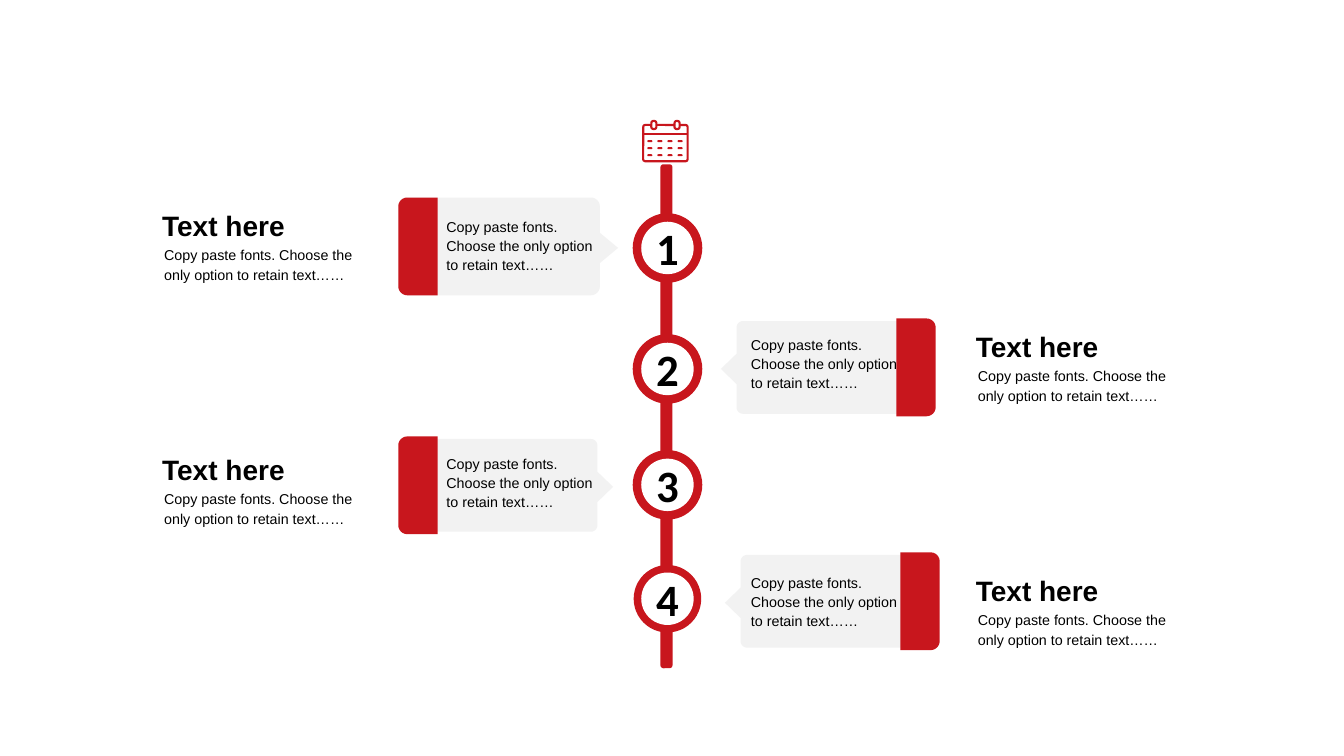
from math import cos, radians, sin

from lxml import etree
from pptx import Presentation
from pptx.dml.color import RGBColor
from pptx.enum.shapes import MSO_CONNECTOR, MSO_SHAPE
from pptx.enum.text import MSO_ANCHOR, PP_ALIGN
from pptx.oxml.ns import qn
from pptx.util import Inches, Pt

RED = RGBColor(0xC8, 0x16, 0x1D)
GREY = RGBColor(0xF2, 0xF2, 0xF2)
WHITE = RGBColor(0xFF, 0xFF, 0xFF)
BLACK = RGBColor(0, 0, 0)

TITLE = "Text here"
BODY = "Copy paste fonts. Choose the only option to retain text……"

# number, side, card edge, card inset, tops of tab, caption and title, ring centre, ring size
STEPS = [
    ("1", "left", 3.95, 0, 1.96, 2.1, 1.96, 2.46, 0.69),
    ("2", "right", 9.28, 0.025, 3.16, 3.27, 3.16, 3.66, 0.69),
    ("3", "left", 3.95, 0.025, 4.33, 4.45, 4.38, 4.81, 0.69),
    ("4", "right", 9.32, 0.025, 5.48, 5.63, 5.58, 5.94, 0.67),
]
COLUMNS = {"left": {"title": 1.51, "caption": 4.33, "inward": 1},
           "right": {"title": 9.58, "caption": 7.35, "inward": -1}}
AXIS = 6.62
DISC = 0.52
CARD_W, CARD_H, CARD_R = 2, 0.97, 0.09
TAB_W = 0.39
TIP_W, TIP_HALF, TIP_Y = 0.18, 0.15, 0.5

prs = Presentation()
prs.slide_width, prs.slide_height = Inches(13.33), Inches(7.5)
slide = prs.slides.add_slide(prs.slide_layouts[6])
shapes = slide.shapes


def paint(sp, fill, line=None):
    sp.shadow.inherit = False
    sp.fill.solid()
    sp.fill.fore_color.rgb = fill
    if line is None:
        sp.line.fill.background()
    else:
        sp.line.color.rgb = line
        sp.line.width = Pt(1.5)
    return sp


def add_preset(kind, x, y, w, h, fill, line=None, radius=None):
    sp = shapes.add_shape(kind, *map(Inches, (x, y, w, h)))
    if radius is not None:
        sp.adjustments[0] = radius / min(w, h)
    return paint(sp, fill, line)


def add_disc(y, size, fill):
    return add_preset(MSO_SHAPE.OVAL, AXIS - size / 2, y - size / 2, size, size, fill)


def arc(cx, cy, r, start):
    angles = [radians(start + 15 * i) for i in range(7)]
    return [(cx + r * cos(a), cy + r * sin(a)) for a in angles]


def add_outline(points, edge, top, inward, fill):
    """Draw points measured inwards from a card's outer edge and down from its top."""
    corners = [(Inches(edge + inward * x), Inches(top + y)) for x, y in points]
    builder = shapes.build_freeform(*corners[0])
    builder.add_line_segments(corners[1:], close=True)
    paint(builder.convert_to_shape(), fill)


def add_card(edge, top, inward, inset):
    far, low, r = CARD_W - inset, CARD_H - inset, CARD_R - inset
    tip = [(far, TIP_Y - TIP_HALF), (far + TIP_W - inset, TIP_Y), (far, TIP_Y + TIP_HALF)]
    body = (arc(inset + r, inset + r, r, 180) + arc(far - r, inset + r, r, 270) + tip
            + arc(far - r, low - r, r, 0) + arc(inset + r, low - r, r, 90))
    tab = (arc(CARD_R, CARD_R, CARD_R, 180) + [(TAB_W, 0), (TAB_W, CARD_H)]
           + arc(CARD_R, CARD_H - CARD_R, CARD_R, 90))
    add_outline(body, edge, top, inward, GREY)
    add_outline(tab, edge, top, inward, RED)


def write(sp, text, size, font="Arial", bold=False, spacing=None, align=PP_ALIGN.LEFT):
    tf = sp.text_frame
    tf.word_wrap = True
    tf.vertical_anchor = MSO_ANCHOR.MIDDLE
    p = tf.paragraphs[0]
    p.text = text
    p.alignment = align
    p.line_spacing = spacing
    f = p.runs[0].font
    f.name, f.size, f.bold = font, Pt(size), bold
    f.color.rgb = BLACK


def add_text(x, y, w, h, text, size, **style):
    write(shapes.add_textbox(*map(Inches, (x, y, w, h))), text, size, **style)


def add_number(y, number):
    sp = add_disc(y, DISC, WHITE)
    tf = sp.text_frame
    tf.margin_left = tf.margin_right = tf.margin_top = tf.margin_bottom = 0
    write(sp, number, 32, font="Calibri", bold=True, align=PP_ALIGN.CENTER)


def add_calendar(x, y):
    box = MSO_SHAPE.ROUNDED_RECTANGLE
    add_preset(box, x + 0.01, y + 0.06, 0.44, 0.36, WHITE, RED, 0.02)
    rule = shapes.add_connector(MSO_CONNECTOR.STRAIGHT, Inches(x + 0.01), Inches(y + 0.15),
                                Inches(x + 0.45), Inches(y + 0.15))
    rule.line.color.rgb = RED
    rule.line.width = Pt(1.5)
    etree.SubElement(rule._element.spPr, qn("a:effectLst"))
    for ring_x in (0.09, 0.32):
        add_preset(box, x + ring_x, y + 0.02, 0.05, 0.08, WHITE, RED, 0.02)
    for row in range(3):
        for col in range(4):
            add_preset(box, x + 0.05 + 0.1 * col, y + 0.21 + 0.07 * row, 0.05, 0.02,
                       RED, radius=0.01)


add_preset(MSO_SHAPE.ROUNDED_RECTANGLE, 6.55, 1.63, 0.12, 5, RED, radius=0.03)
add_calendar(6.37, 1.18)
for number, side, edge, inset, tab_y, caption_y, title_y, ring_y, ring in STEPS:
    column = COLUMNS[side]
    add_card(edge, tab_y, column["inward"], inset)
    add_disc(ring_y, ring, RED)
    add_number(ring_y, number)
    add_text(column["caption"], caption_y, 1.7, 0.66, BODY, 10.2, spacing=1.1)
    add_text(column["title"] + 0.02, title_y + 0.32, 2.14, 0.66, BODY, 10.2, spacing=1.2)
    add_text(column["title"], title_y, 2.14, 0.56, TITLE, 20, bold=True)

prs.save("out.pptx")
